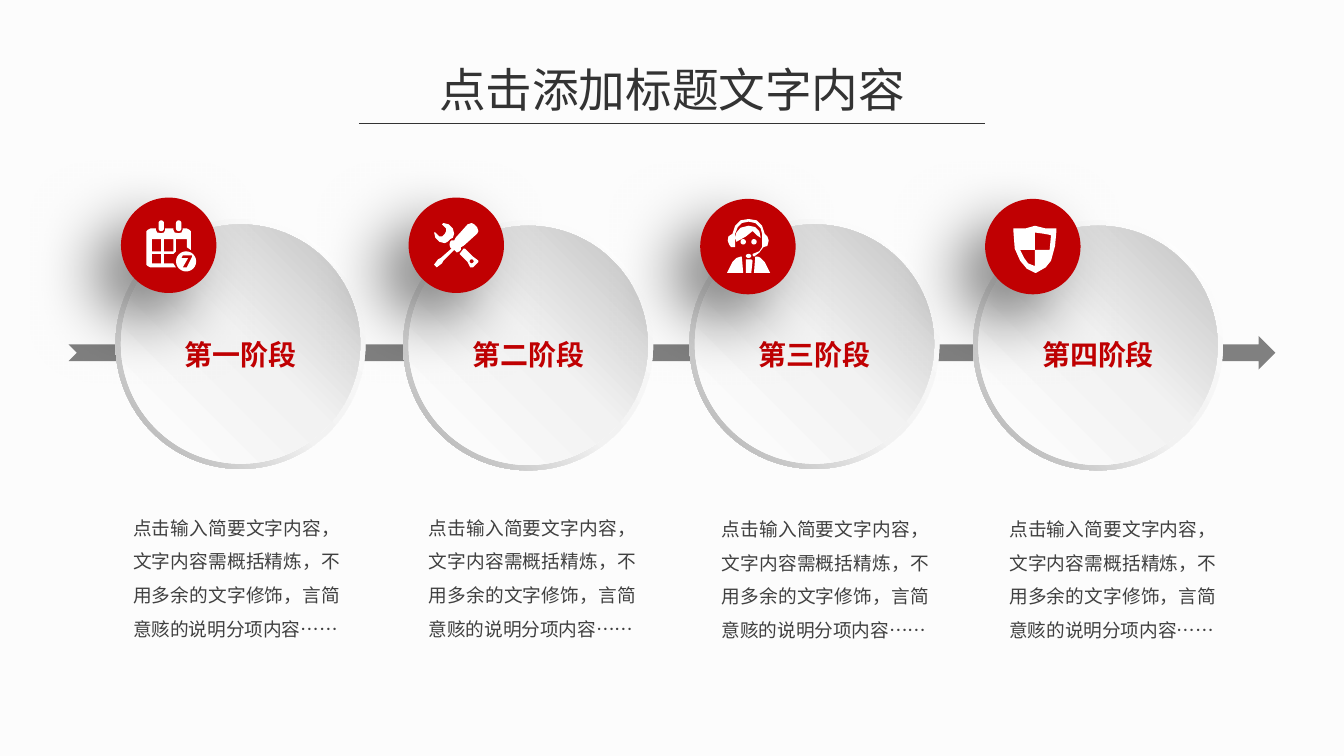
from math import cos, pi, sin

from pptx import Presentation
from pptx import util as u
from pptx.dml.color import RGBColor
from pptx.enum import shapes, text
from pptx.oxml import parse_xml
from pptx.oxml.ns import nsdecls, qn

FONT = "Noto Sans CJK SC"
PAPER = RGBColor(0xFC, 0xFC, 0xFC)
INK = RGBColor(0x33, 0x33, 0x33)
BODY = RGBColor(0x40, 0x40, 0x40)
GREY = RGBColor(0x80, 0x80, 0x80)
RED = RGBColor(0xC0, 0x00, 0x02)
WHITE = RGBColor(0xFF, 0xFF, 0xFF)
LIGHT = RGBColor(0xF2, 0xF2, 0xF2)
MID = RGBColor(0xBF, 0xBF, 0xBF)
DARK = RGBColor(0xA6, 0xA6, 0xA6)

WIDE = 10
HIGH = WIDE * 9 / 16
DISC, EDGE, BADGE = 1.86, 0.04, 0.71
NOTE = "点击输入简要文字内容，文字内容需概括精炼，不用多余的文字修饰，言简意赅的说明分项内容……"
GROW = {"auto_size": text.MSO_AUTO_SIZE.SHAPE_TO_FIT_TEXT}
CENTER = {"alignment": text.PP_ALIGN.CENTER}


def oval(x, y, rx, ry):
    """Points around an oval with its centre at x, y."""
    turns = [pi * k / 12 for k in range(24)]
    return [(x + rx * cos(t), y + ry * sin(t)) for t in turns]


def rect(x, y, w, h):
    return [(x, y), (x + w, y), (x + w, y + h), (x, y + h)]


def pill(x, y, w, h):
    """An upright bar with round ends."""
    r, ends = w / 2, oval(0, 0, w / 2, w / 2)
    return ([(x + r + a, y + h - r + b) for a, b in ends[:13]]
            + [(x + r + a, y + r + b) for a, b in ends[12:]])


# Icon outlines, in hundredths of an inch; inner outlines cut holes
DATE = [
    pill(22, 0, 4, 8), pill(9, 0, 4, 8),
    [(3, 6), (1, 7), (0, 8), (0, 33), (1, 34), (3, 35), (22, 35), (20, 32),
     (13, 32), (13, 25), (20, 25), (22, 23), (22, 14), (30, 14), (30, 20),
     (33, 22), (33, 8), (32, 7), (30, 6), (27, 6), (27, 7), (26, 9), (24, 9.5),
     (21, 9), (20, 7), (20, 6), (14, 6), (14, 7), (13, 9), (11, 9.5), (8, 9),
     (7, 7), (7, 6)],
    rect(4, 14, 7, 9), rect(13, 14, 7, 9), rect(4, 25, 7, 7),
    oval(29.5, 30.5, 7.5, 7.5),
    [(27, 26), (34, 26), (34, 27), (30, 35), (27, 35), (31, 28), (26, 28)],
]
TOOLS = [
    [(12, 12), (14, 11), (15, 8), (14, 4), (11, 1), (7, 0), (6, 1), (9, 4),
     (9, 6), (8, 8), (6, 10), (4, 10), (1, 7), (0, 7), (1, 11), (4, 14),
     (8, 15), (10, 14), (11, 13)],
    [(22, 19), (19, 23), (25, 29), (27, 33), (29, 33), (33, 29), (33, 28),
     (29, 25), (23, 19)],
    oval(28, 28.5, 1.5, 1.5),
    [(32, 3), (30, 1), (28, 0), (25, 1), (16, 11), (15, 13), (13, 13),
     (12, 14), (11.5, 16), (12, 18), (13, 19), (5, 26), (3, 27), (0, 31),
     (2, 33), (6, 30), (7, 28), (15, 20), (17, 22), (19, 21), (20, 20),
     (20, 18), (22, 17), (32, 8), (33, 6)],
]
AGENT = [
    [(4, 11), (1, 13), (0.5, 16), (1.5, 19), (3, 21), (6, 21), (6, 11), (8, 6),
     (11, 3), (16, 2), (21, 3), (25, 7), (26, 11), (26, 21), (24, 24),
     (19, 26), (19, 27), (20, 28), (24, 25), (27, 21), (30, 20), (31, 16),
     (30, 13), (28, 11), (26, 5), (22, 1), (16, 0), (10, 1), (6, 5)],
    [(16, 5), (10, 6.5), (7, 10), (6, 14), (7, 17), (14, 13), (19, 9),
     (22, 12), (25, 14), (24, 9), (21, 6)],
    oval(12, 17, 2, 2), oval(20, 17, 2, 2), oval(16, 27.5, 2, 1.5),
    [(23, 28), (21, 28), (20, 40), (32, 40), (28, 32), (25, 29)],
    [(10, 28), (7, 29), (4, 32), (0, 40), (12, 40), (11, 28)],
    [(14, 30), (14, 40), (18, 40), (19, 31), (18, 30)],
]
SHIELD = [
    [(0, 2), (9, 2), (16, 0), (24, 2), (32, 2), (32, 4), (31, 15), (28, 26),
     (24, 31), (17, 35), (16, 35), (10, 32), (5, 26), (1, 17), (0, 4)],
    [(16, 18), (27, 18), (28, 7), (23, 6), (16, 5)],
    [(16, 30), (16, 18), (5, 18), (8, 24), (11, 28)],
]

# Label, disc corner, badge corner, note corner, icon corner, icon
STAGES = [
    ("第一阶段", (0.86, 1.63), (0.9, 1.47), (0.99, 3.76), (1.09, 1.64), DATE),
    ("第二阶段", (3, 1.64), (3.04, 1.47), (3.19, 3.76), (3.23, 1.66), TOOLS),
    ("第三阶段", (5.13, 1.63), (5.21, 1.48), (5.37, 3.77), (5.41, 1.63), AGENT),
    ("第四阶段", (7.24, 1.64), (7.33, 1.48), (7.51, 3.77), (7.54, 1.68), SHIELD),
]


def put(item, form):
    for name, value in form.items():
        setattr(item, name, value)


def write(host, box, words, tint, font, para, frame):
    part = host.add_textbox(*map(u.Inches, box)).text_frame
    put(part, {"word_wrap": True, **GROW, **frame})
    line = part.paragraphs[0]
    put(line, para)
    run = line.add_run()
    run.text = words
    put(run.font, {"name": FONT, **font})
    run.font.color.rgb = tint
    run.font._element.append(parse_xml(f'<a:ea {nsdecls("a")} typeface="{FONT}"/>'))


def paint(item, tint):
    item.shadow.inherit = False
    item.line.fill.background()
    item.fill.solid()
    item.fill.fore_color.rgb = tint
    return item


def shape(host, kind, box, tint):
    return paint(host.add_shape(kind, *map(u.Inches, box)), tint)


def shade(item, stops, angle):
    """Fill with a linear blend; the angle runs clockwise."""
    old = item._element.spPr.find(qn("a:solidFill"))
    marks = "".join(f'<a:gs pos="{at * 1000}"><a:srgbClr val="{tint}"/></a:gs>'
                    for at, tint in stops)
    new = parse_xml(f'<a:gradFill {nsdecls("a")} rotWithShape="1"><a:gsLst>{marks}'
                    f'</a:gsLst><a:lin ang="{angle * 60000}" scaled="0"/></a:gradFill>')
    old.getparent().replace(old, new)


def title(slide, box):
    x, y, w, h = box
    write(slide.shapes, (x + 0.48, y, w - 0.96, h), "点击添加标题文字内容",
          INK, {"size": u.Pt(25)}, CENTER, {})
    rule = slide.shapes.add_connector(
        shapes.MSO_CONNECTOR.STRAIGHT, *map(u.Inches, (x, y + h, x + w, y + h)))
    rule.line.color.rgb = INK
    rule.line.width = u.Pt(0.75)
    rule._element.spPr.append(parse_xml(f'<a:effectLst {nsdecls("a")}/>'))


def disc(slide, box, label):
    x, y, w, h = box
    group = slide.shapes.add_group_shape().shapes
    ring = shape(group, shapes.MSO_SHAPE.DONUT, box, DARK)
    ring.adjustments[0] = 0.049
    shade(ring, [(0, WHITE), (55, LIGHT), (100, DARK)], 135)
    face = shape(group, shapes.MSO_SHAPE.OVAL,
                 (x + EDGE, y + EDGE, w - 2 * EDGE, h - 2 * EDGE), MID)
    shade(face, [(0, WHITE), (51, LIGHT), (100, MID)], 315)
    write(group, (x + (w - 1.04) / 2, 2.46, 1.04, 0.35), label, RED,
          {"size": u.Pt(15), "bold": True}, CENTER, {"word_wrap": False})


def badge(slide, box, spot, icon):
    dot = shape(slide.shapes, shapes.MSO_SHAPE.OVAL, box, RED)
    dot._element.spPr.find(qn("a:effectLst")).append(parse_xml(
        f'<a:outerShdw {nsdecls("a")} blurRad="{u.Pt(35)}" dist="{u.Pt(20)}" '
        f'dir="{135 * 60000}" algn="tr" rotWithShape="0"><a:srgbClr val="000000">'
        '<a:alpha val="50000"/></a:srgbClr></a:outerShdw>'))
    # All outlines share one path, so that the holes stay open
    unit = u.Inches(0.01)
    loops = [[(x * unit, y * unit) for x, y in loop] for loop in icon]
    pen = slide.shapes.build_freeform(*loops[0][0])
    for loop in loops:
        if loop is not loops[0]:
            pen.move_to(*loop[0])
        pen.add_line_segments(loop[1:], close=True)
    paint(pen.convert_to_shape(*map(u.Inches, spot)), WHITE)


def note(slide, box):
    sides = ("left", "top", "right", "bottom")
    write(slide.shapes, box, NOTE, BODY, {"size": u.Pt(10)},
          {"alignment": text.PP_ALIGN.JUSTIFY, "line_spacing": 1.5},
          {f"margin_{side}": 0 for side in sides})


def main():
    deck = Presentation()
    put(deck, {"slide_width": u.Inches(WIDE), "slide_height": u.Inches(HIGH)})
    slide = deck.slides.add_slide(deck.slide_layouts[6])
    slide.background.fill.solid()
    slide.background.fill.fore_color.rgb = PAPER

    title(slide, (2.67, 0.4, 4.66, 0.52))
    # Time line behind the stages
    shape(slide.shapes, shapes.MSO_SHAPE.NOTCHED_RIGHT_ARROW,
          (0.51, 2.5, 8.98, 0.25), GREY)
    for label, ring, dot, words, spot, icon in STAGES:
        disc(slide, (*ring, DISC, DISC), label)
        badge(slide, (*dot, BADGE, BADGE), spot, icon)
        note(slide, (*words, 1.54, 1.01))
    deck.save("out.pptx")


if __name__ == "__main__":
    main()
